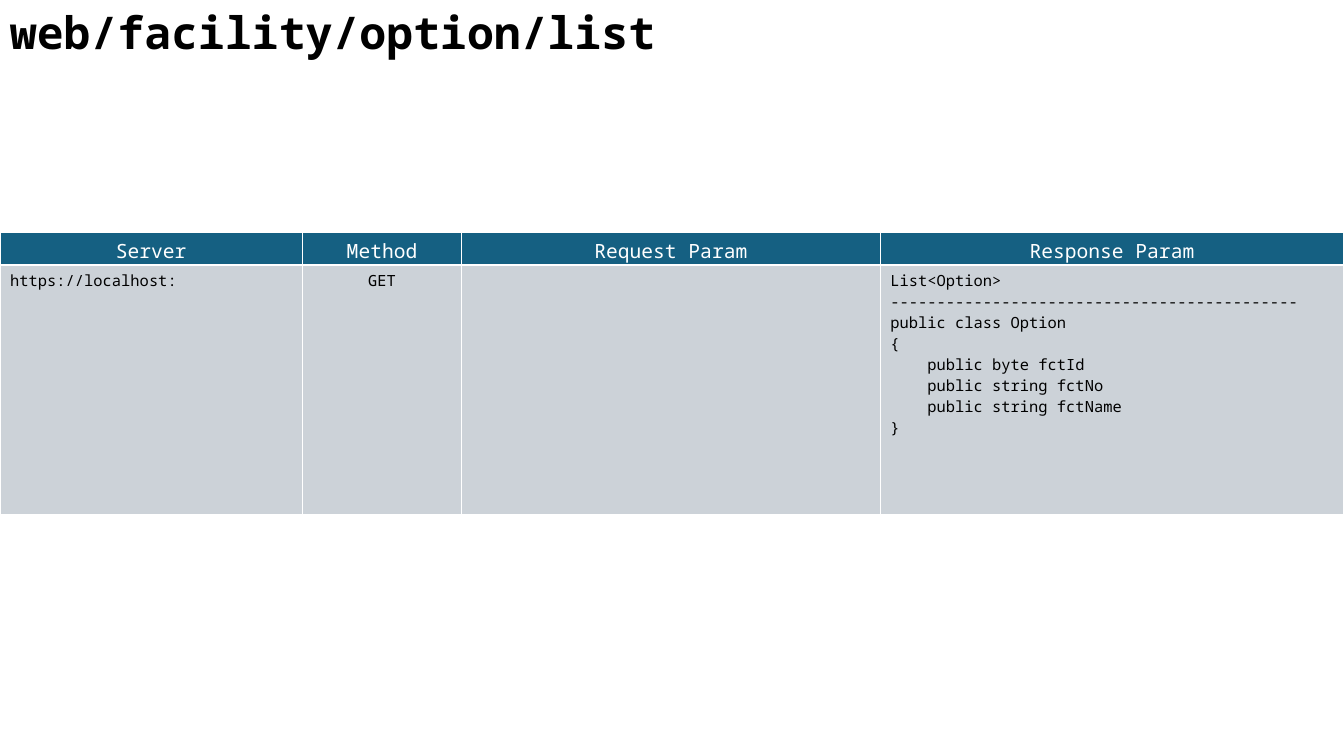
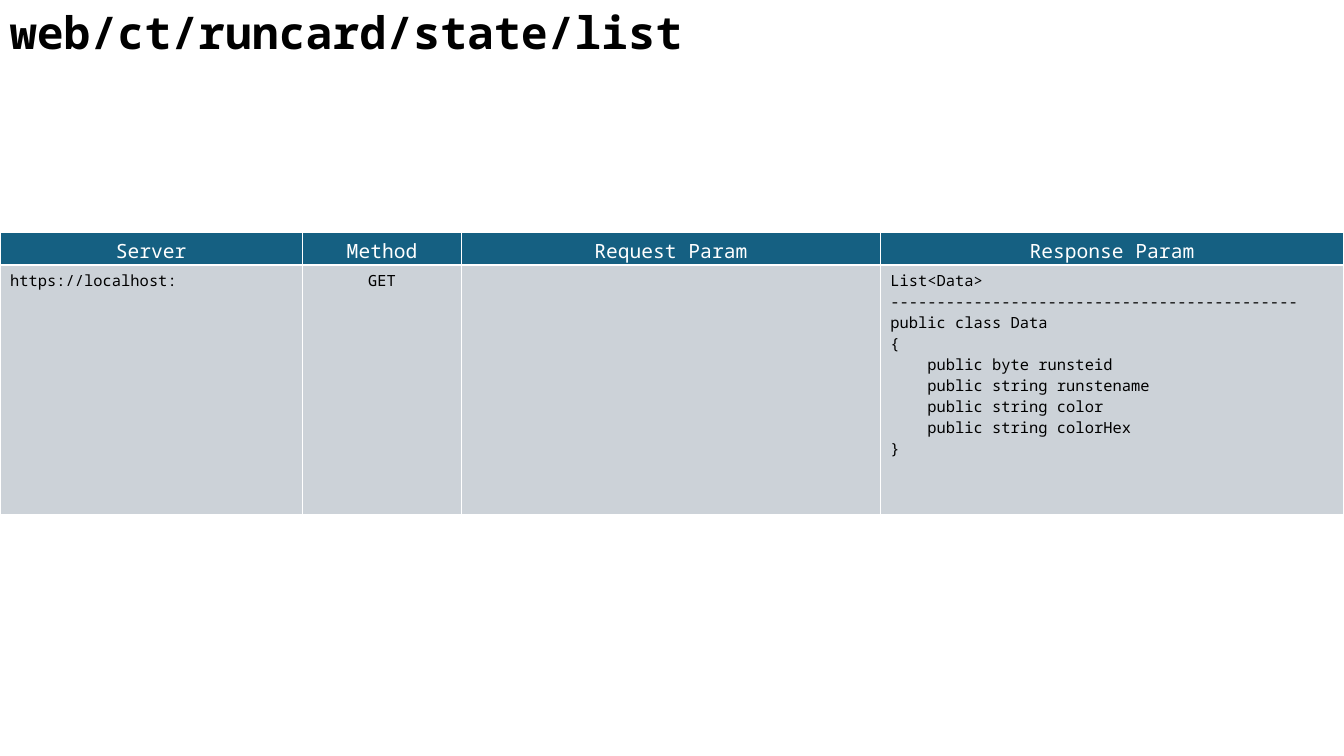
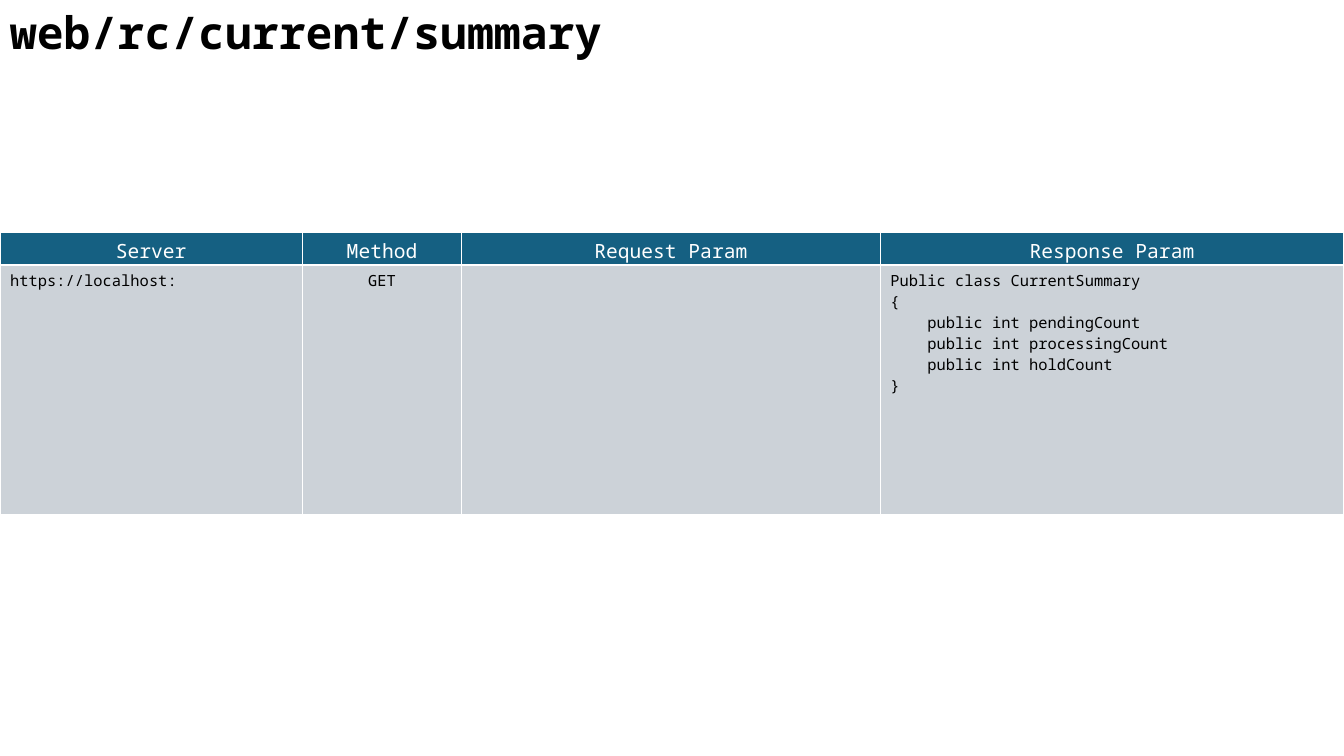
from lxml import etree
from pptx import Presentation
from pptx.dml.color import RGBColor
from pptx.enum.text import MSO_AUTO_SIZE, PP_ALIGN
from pptx.oxml.ns import qn
from pptx.util import Inches, Pt

LEFT, MID = PP_ALIGN.LEFT, PP_ALIGN.CENTER
FIT = MSO_AUTO_SIZE.SHAPE_TO_FIT_TEXT

# Shared look
WIDE, HIGH = 13.33, 7.5
FONT = "Noto Sans Mono"
BLACK, WHITE, TEAL, GREY = "000000", "FFFFFF", "156082", "CCD2D8"

# Table grid
TOP = 2.31
COLS = (3, 1.58, 4.15, 4.6)
ROWS = (0.32, 2.48)
HEADS = ("Server", "Method", "Request Param", "Response Param")
HOST = "https://localhost:"
RULE = "-" * 44


def tint(code):
    return RGBColor.from_string(code)


def write(frame, lines, size, color, align=LEFT, bold=False):
    """Fill a text frame with one paragraph per line."""
    for i, line in enumerate(lines):
        para = frame.paragraphs[0] if i == 0 else frame.add_paragraph()
        para.alignment = align
        run = para.add_run()
        run.text = line
        font = run.font
        font.name, font.size, font.bold = FONT, Pt(size), bold
        font.color.rgb = tint(color)


def edge(cell, color, width):
    """Draw a solid line on all four sides of a cell."""
    props = cell._tc.get_or_add_tcPr()
    for side in "LRTB":
        line = etree.SubElement(props, qn("a:ln" + side), w=str(Pt(width)))
        fill = etree.SubElement(line, qn("a:solidFill"))
        etree.SubElement(fill, qn("a:srgbClr"), val=color)


def paint(cell, color):
    edge(cell, WHITE, 1)
    cell.fill.solid()
    cell.fill.fore_color.rgb = tint(color)


def title(slide, text):
    box = slide.shapes.add_textbox(0, 0, Inches(9.45), Inches(0.64))
    frame = box.text_frame
    frame.word_wrap = True
    frame.auto_size = FIT
    write(frame, [text], 32, BLACK, bold=True)


def grid(slide, reply):
    """Add the table of one call: a header row and a body row."""
    table = slide.shapes.add_table(
        len(ROWS), len(COLS), 0, Inches(TOP),
        Inches(WIDE), Inches(sum(ROWS))).table
    table.horz_banding = False
    for row, size in zip(table.rows, ROWS):
        row.height = Inches(size)
    body = ([HOST], ["GET"], [], reply)
    for i, (width, head, lines) in enumerate(zip(COLS, HEADS, body)):
        table.columns[i].width = Inches(width)
        top, low = table.cell(0, i), table.cell(1, i)
        paint(top, TEAL)
        top.margin_bottom = 0
        write(top.text_frame, [head], 14, WHITE, MID)
        paint(low, GREY)
        write(low.text_frame, lines, 11, BLACK, MID if head == "Method" else LEFT)


def model(name, fields, lead="public"):
    """Code lines of a class with its public fields."""
    inner = ["    public " + field for field in fields]
    return [f"{lead} class {name}", "{", *inner, "}"]


def many(name, fields):
    """Code lines of a list reply and of its item class."""
    return [f"List<{name}>", RULE, *model(name, fields)]


CALLS = (
    ("web/facility/option/list",
     many("Option", ["byte fctId", "string fctNo", "string fctName"])),
    ("web/ct/runcard/state/list",
     many("Data", ["byte runsteid", "string runstename",
                   "string color", "string colorHex"])),
    ("web/rc/current/summary",
     model("CurrentSummary", ["int pendingCount", "int processingCount",
                              "int holdCount"], "Public")),
)


def main():
    deck = Presentation()
    deck.slide_width, deck.slide_height = Inches(WIDE), Inches(HIGH)
    for route, reply in CALLS:
        slide = deck.slides.add_slide(deck.slide_layouts[6])
        title(slide, route)
        grid(slide, reply)
    deck.save("out.pptx")


if __name__ == "__main__":
    main()
